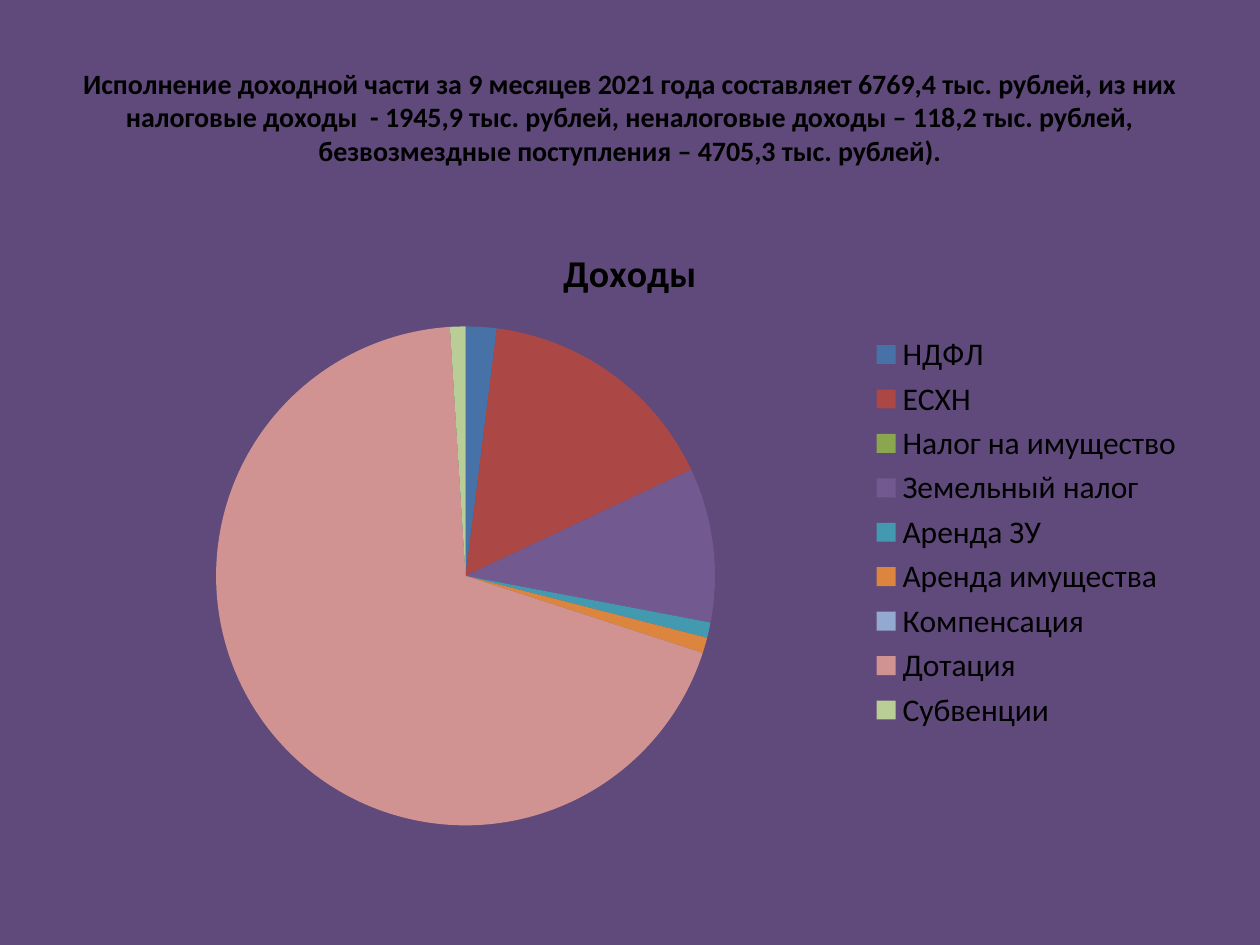
from typing import NamedTuple

from lxml.etree import SubElement
from pptx import Presentation
from pptx.chart.chart import Chart
from pptx.chart.data import CategoryChartData
from pptx.dml.color import RGBColor
from pptx.enum.chart import XL_CHART_TYPE, XL_LEGEND_POSITION
from pptx.enum.text import MSO_ANCHOR, PP_ALIGN
from pptx.oxml.ns import qn
from pptx.slide import Slide
from pptx.text.text import Font
from pptx.util import Pt

FONT = "Calibri"
BLACK = "000000"
MARGIN, CONTENT_WIDTH = 36, 648


class Income(NamedTuple):
    source: str
    percent: int
    color: str


INCOMES = [
    Income("НДФЛ", 2, "4672A8"),
    Income("ЕСХН", 16, "AB4744"),
    Income("Налог на имущество", 0, "8AA64F"),
    Income("Земельный налог", 10, "725990"),
    Income("Аренда ЗУ", 1, "4299B0"),
    Income("Аренда имущества", 1, "DC853E"),
    Income("Компенсация", 0, "93A9CF"),
    Income("Дотация", 69, "D19392"),
    Income("Субвенции", 1, "B9CD96"),
]


def rgb(value: str) -> RGBColor:
    return RGBColor.from_string(value)


def style_font(font: Font, size: float, bold: bool = False, color: str = BLACK) -> None:
    font.name, font.size, font.bold = FONT, Pt(size), bold
    font.color.rgb = rgb(color)


def add_text(slide: Slide, text: str, *, top: float, height: float,
             size: float, bold: bool = False) -> None:
    box = slide.shapes.add_textbox(Pt(MARGIN), Pt(top), Pt(CONTENT_WIDTH), Pt(height))
    frame = box.text_frame
    frame.word_wrap = True
    frame.vertical_anchor = MSO_ANCHOR.MIDDLE
    paragraph = frame.paragraphs[0]
    paragraph.alignment = PP_ALIGN.CENTER
    run = paragraph.add_run()
    run.text = text
    style_font(run.font, size, bold)


def place_plot(chart: Chart, **fractions: float) -> None:
    """Fix the plot area at the given fractions of the chart frame."""
    plot_area = chart.plots[0]._element.getparent()
    for old_layout in plot_area.findall(qn("c:layout")):
        plot_area.remove(old_layout)
    layout = SubElement(plot_area, qn("c:layout"))
    plot_area.insert(0, layout)
    manual = SubElement(layout, qn("c:manualLayout"))
    settings = {"layoutTarget": "inner", "xMode": "edge", "yMode": "edge", **fractions}
    for tag, value in settings.items():
        SubElement(manual, qn(f"c:{tag}")).set("val", str(value))


def add_income_pie(slide: Slide, incomes: list[Income], *, top: float, height: float) -> None:
    data = CategoryChartData()
    data.categories = [income.source for income in incomes]
    data.add_series("Доходы", [income.percent for income in incomes])
    chart = slide.shapes.add_chart(
        XL_CHART_TYPE.PIE, Pt(MARGIN), Pt(top), Pt(CONTENT_WIDTH), Pt(height), data
    ).chart
    style_font(chart.font, 18)

    chart.has_title = True
    title = chart.chart_title.text_frame.paragraphs[0].add_run()
    title.text = "Доходы"
    style_font(title.font, 21.6, bold=True)

    chart.has_legend = True
    chart.legend.position = XL_LEGEND_POSITION.RIGHT
    chart.legend.include_in_layout = False
    style_font(chart.legend.font, 18)

    pie = chart.plots[0]
    pie.vary_by_categories = True
    for index, income in enumerate(incomes):
        fill = pie.series[0].points[index].format.fill
        fill.solid()
        fill.fore_color.rgb = rgb(income.color)
    place_plot(chart, x=0.13, y=0.17, w=0.45, h=0.8)


def main() -> None:
    deck = Presentation()
    deck.slide_width, deck.slide_height = Pt(720), Pt(540)
    slide = deck.slides.add_slide(deck.slide_layouts[6])
    background = slide.background.fill
    background.solid()
    background.fore_color.rgb = rgb("604A7B")

    add_text(
        slide,
        "Исполнение доходной части за 9 месяцев 2021 года составляет 6769,4 тыс. рублей, "
        "из них налоговые доходы  - 1945,9 тыс. рублей, неналоговые доходы – 118,2 тыс. "
        "рублей, безвозмездные поступления – 4705,3 тыс. рублей).",
        top=21.6, height=90, size=16, bold=True,
    )
    add_income_pie(slide, INCOMES, top=126, height=356.4)
    deck.save("out.pptx")


if __name__ == "__main__":
    main()
